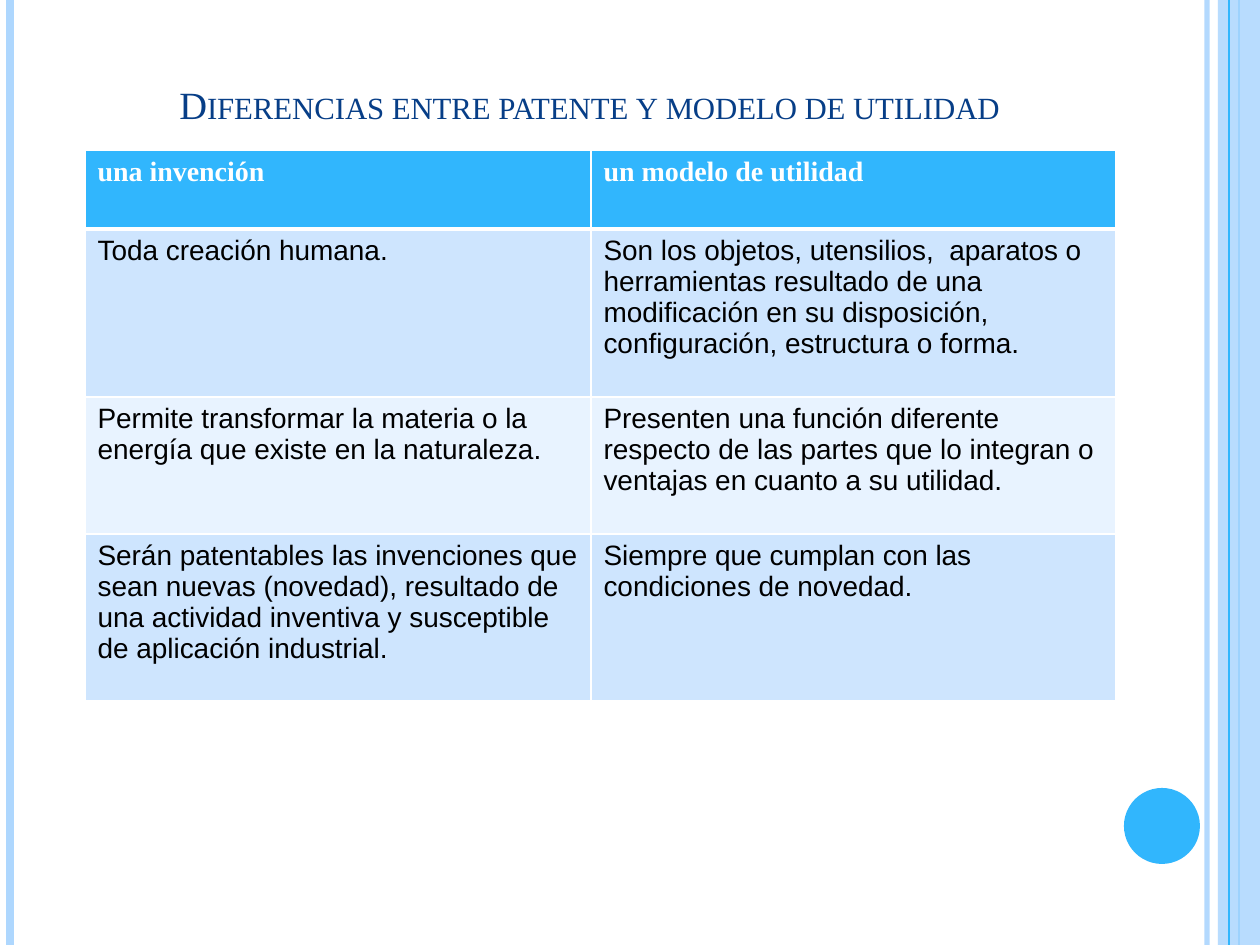
"""Build the slide comparing patents with utility models."""
import pptx
import pptx.dml.color
import pptx.enum.shapes
import pptx.enum.text
import pptx.oxml
import pptx.oxml.ns
import pptx.util
from lxml import etree

PX = 914400 / 126
THEME = {
    "sky": "31B6FD", "pale": "AED7FE", "navy": "073E87",
    "white": "FFFFFF", "black": "000000",
    "bands": ["CEE5FE", "E8F3FF"],
    "serif": "Times New Roman", "sans": "Arial",
    "title_size": 22, "cell_size": 16,
}
qn = pptx.oxml.ns.qn


def px(*lengths):
    return [pptx.util.Emu(round(length * PX)) for length in lengths]


def paint(fill, color, alpha=100):
    fill.solid()
    fill.fore_color.rgb = pptx.dml.color.RGBColor.from_string(color)
    if alpha < 100:
        tint = fill._xPr.find(".//" + qn("a:srgbClr"))
        etree.SubElement(tint, qn("a:alpha"), val=str(alpha * 1000))


deck = pptx.Presentation()
deck.slide_width, deck.slide_height = px(1260, 945)
slide = deck.slides.add_slide(deck.slide_layouts[5])
paint(slide.background.fill, THEME["white"])

rect = pptx.enum.shapes.MSO_SHAPE.RECTANGLE
oval = pptx.enum.shapes.MSO_SHAPE.OVAL
decorations = [
    ("stripe", 1207, "pale", 3, 93),
    ("stripe", 10, "pale", 4.5, 100),
    ("stripe", 1239, "sky", 1.5, 100),
    (rect, (1218, 0, 42, 945), "pale", 0, 87),
    ("stripe", 1229, "sky", 0.75, 100),
    (oval, (1124, 788, 76, 76), "sky", 0, 100),
]
for kind, place, color, weight, alpha in decorations:
    if kind == "stripe":
        stripe = slide.shapes.add_connector(
            pptx.enum.shapes.MSO_CONNECTOR.STRAIGHT, *px(place, 0, place, 945))
        stripe.line.width = pptx.util.Pt(weight)
        paint(stripe.line.fill, THEME[color], alpha)
        etree.SubElement(stripe._element.spPr, qn("a:effectLst"))
    else:
        ornament = slide.shapes.add_shape(kind, *px(*place))
        ornament.shadow.inherit = False
        ornament.line.fill.background()
        paint(ornament.fill, THEME[color], alpha)

heading = slide.shapes.title
heading.left, heading.top, heading.width, heading.height = px(63, 0, 1053, 195)
heading_format = {
    "word_wrap": True,
    "auto_size": pptx.enum.text.MSO_AUTO_SIZE.NONE,
    "vertical_anchor": pptx.enum.text.MSO_ANCHOR.BOTTOM,
    "margin_bottom": px(68)[0],
}
for attribute, value in heading_format.items():
    setattr(heading.text_frame, attribute, value)
heading_line = heading.text_frame.paragraphs[0]
heading_line.alignment = pptx.enum.text.PP_ALIGN.CENTER
heading_words = heading_line.add_run()
heading_words.text = "Diferencias entre patente y modelo de utilidad"
heading_words.font.name = THEME["serif"]
heading_words.font.size = pptx.util.Pt(THEME["title_size"])
paint(heading_words.font.fill, THEME["navy"])
heading_words.font._element.set("cap", "small")

comparison = [
    ("una invención", "un modelo de utilidad"),
    ("Toda creación humana.",
     "Son los objetos, utensilios,  aparatos o herramientas resultado de una "
     "modificación en su disposición, configuración, estructura o forma."),
    ("Permite transformar la materia o la energía que existe en la naturaleza.",
     "Presenten una función diferente respecto de las partes que lo integran o "
     "ventajas en cuanto a su utilidad."),
    ("Serán patentables las invenciones que sean nuevas (novedad), resultado de "
     "una actividad inventiva y susceptible de aplicación industrial.",
     "Siempre que cumplan con las condiciones de novedad."),
]
column_widths = [506, 525]
row_heights = [79, 168, 137, 167]
grid = slide.shapes.add_table(
    len(row_heights), len(column_widths),
    *px(85, 150, sum(column_widths), sum(row_heights))).table
for column, width in zip(grid.columns, px(*column_widths)):
    column.width = width
for row, height in zip(grid.rows, px(*row_heights)):
    row.height = height

for r, statements in enumerate(comparison):
    header = r == 0
    font_format = {
        "name": THEME["serif" if header else "sans"],
        "size": pptx.util.Pt(THEME["cell_size"]),
        "bold": header,
    }
    borders = {"lnL": 1, "lnR": 1, "lnT": 3 if r == 1 else 1, "lnB": 3 if header else 1}
    for c, statement in enumerate(statements):
        cell = grid.cell(r, c)
        properties = cell._tc.get_or_add_tcPr()
        for side, weight in borders.items():
            edge = etree.SubElement(properties, qn("a:" + side), w=str(weight * 12700))
            edge_fill = etree.SubElement(edge, qn("a:solidFill"))
            etree.SubElement(edge_fill, qn("a:srgbClr"), val=THEME["white"])
        paint(cell.fill, THEME["sky"] if header else THEME["bands"][(r - 1) % 2])
        words = cell.text_frame.paragraphs[0].add_run()
        words.text = statement
        for attribute, value in font_format.items():
            setattr(words.font, attribute, value)
        paint(words.font.fill, THEME["white" if header else "black"])

deck.save("out.pptx")
